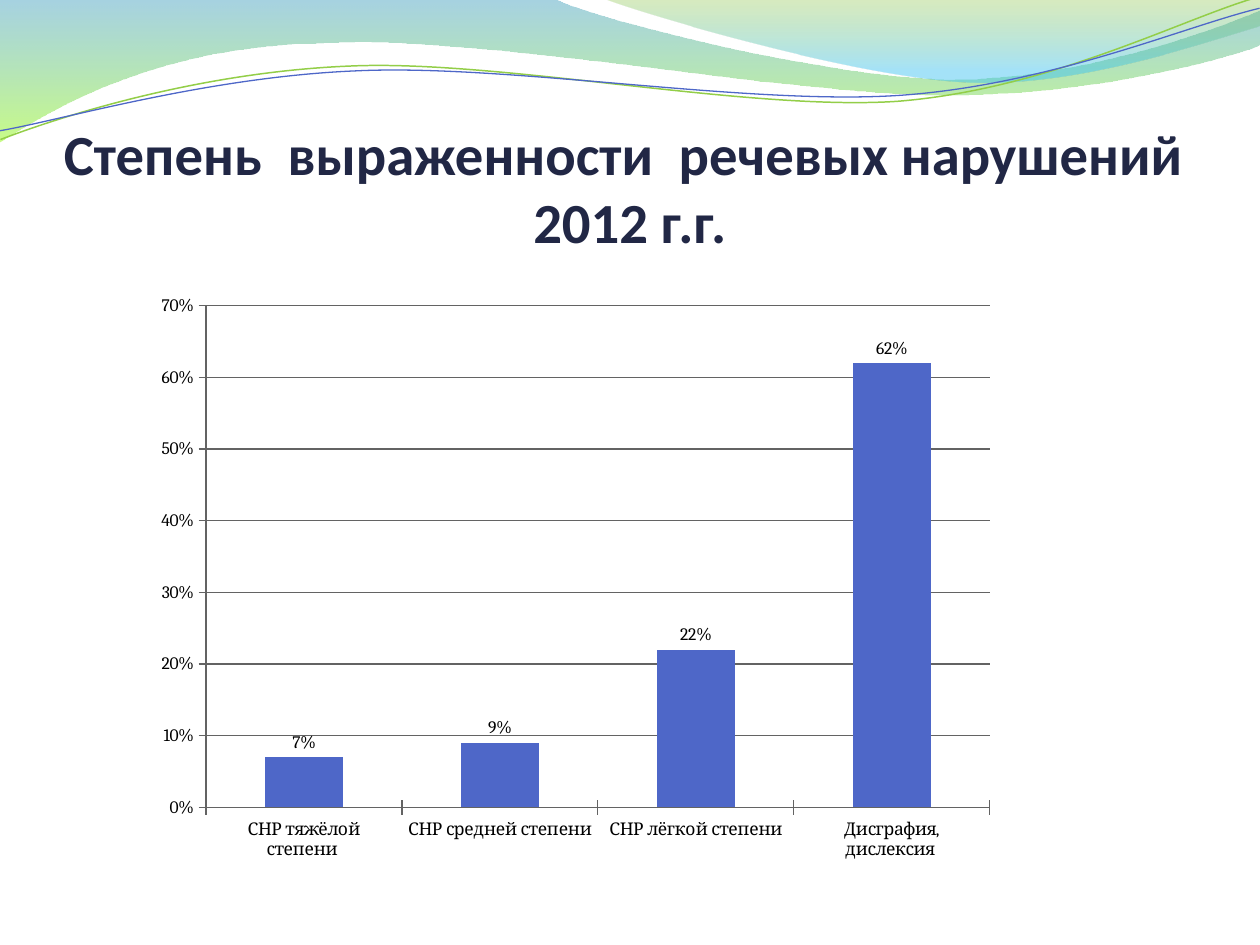
from lxml import etree
from pptx import Presentation
from pptx.chart.data import CategoryChartData
from pptx.dml.color import RGBColor
from pptx.enum.chart import XL_CHART_TYPE, XL_LABEL_POSITION, XL_TICK_MARK
from pptx.enum.text import MSO_ANCHOR, PP_ALIGN
from pptx.oxml.ns import qn
from pptx.util import Emu, Pt

EMU_PER_PX = 914400 / 126
LINE_TILT = 357.3
COLORS = {
    "title": "212745", "bar": "4E67C8", "axis": "636363", "text": "000000",
    "teal": "3B9CBF", "lime": "9CFA24", "olive": "7EBE2C", "sky": "39C1F1",
    "green_line": "93CE48", "blue_line": "4E67C8",
}

# Each wave is a start point, then line ends (1 point) or Bezier curves (3 points)
BACK_WAVE = [
    (0, 0), [(554, -1)],
    [(600, 21), (837, 79), (955, 79)], [(1075, 79), (1207, 33), (1260, 11)],
    [(1261, 45)],
    [(1239, 55), (1096, 96), (940, 95)], [(784, 94), (481, 35), (324, 43)],
    [(163, 45), (58, 105), (-1, 142)], [(0, 0)],
]
FRONT_WAVE = [
    (604, -1),
    [(641, 14), (859, 78), (969, 82)], [(1079, 87), (1211, 40), (1260, 26)],
    [(1260, 0)], [(604, -1)],
]
# The two line waves are given before their tilt
GREEN_CURVE = [
    (-2, 110), [(58, 90), (199, 52), (350, 53)],
    [(499, 53), (745, 117), (896, 114)], [(1049, 109), (1184, 45), (1260, 27)],
]
BLUE_CURVE = [
    (-2, 101), [(57, 94), (207, 57), (357, 58)],
    [(509, 58), (750, 112), (902, 108)], [(1052, 104), (1188, 52), (1262, 38)],
]
SEVERITY = {
    "СНР тяжёлой степени ": 0.07,
    "СНР средней степени": 0.09,
    "СНР лёгкой степени": 0.22,
    "Дисграфия, дислексия ": 0.62,
}


def px(length):
    return Emu(round(length * EMU_PER_PX))


def rgb(name):
    return RGBColor.from_string(COLORS[name])


def add_wave(slide, outline, closed):
    start, *segments = outline
    builder = slide.shapes.build_freeform(px(start[0]), px(start[1]))
    builder.add_line_segments(
        [(px(x), px(y)) for segment in segments for x, y in segment], close=closed)
    wave = builder.convert_to_shape()
    wave.shadow.inherit = False

    # Merge the three points of each curve into one Bezier segment
    steps = iter(list(wave._element.spPr.iter(qn("a:lnTo"))))
    for segment in segments:
        group = [next(steps) for _ in segment]
        if len(group) == 3:
            curve = etree.Element(qn("a:cubicBezTo"))
            group[0].addprevious(curve)
            for step in group:
                curve.append(step[0])
                step.getparent().remove(step)
    return wave


def add_filled_wave(slide, outline, stops):
    wave = add_wave(slide, outline, True)
    wave.line.fill.background()
    wave.fill.gradient()
    wave.fill.gradient_angle = 270
    for stop, (position, color, opacity) in zip(wave.fill.gradient_stops, stops):
        stop.position = position
        stop.color.rgb = rgb(color)
    # Opacity of each gradient stop
    for color_xml, stop in zip(wave._element.spPr.iter(qn("a:srgbClr")), stops):
        etree.SubElement(color_xml, qn("a:alpha"), val=str(stop[2] * 1000))


def add_wave_line(slide, outline, color, width):
    wave = add_wave(slide, outline, False)
    wave.rotation = LINE_TILT
    wave.fill.background()
    wave.line.color.rgb = rgb(color)
    wave.line.width = Pt(width)


def add_title(slide, text):
    frame = slide.shapes.add_textbox(px(63), px(97), px(1134), px(158)).text_frame
    frame.word_wrap = True
    frame.vertical_anchor = MSO_ANCHOR.BOTTOM
    frame.margin_left = frame.margin_right = frame.margin_bottom = 0
    paragraph = frame.paragraphs[0]
    paragraph.text = text
    paragraph.alignment = PP_ALIGN.CENTER
    paragraph.font.name = "Calibri"
    paragraph.font.size = Pt(32.4)
    paragraph.font.bold = True
    paragraph.font.color.rgb = rgb("title")


def style_line(line):
    line.color.rgb = rgb("axis")
    line.width = Pt(0.75)


def add_severity_chart(slide):
    data = CategoryChartData(number_format="0%")
    data.categories = list(SEVERITY)
    data.add_series("Series 1", list(SEVERITY.values()))
    chart = slide.shapes.add_chart(XL_CHART_TYPE.COLUMN_CLUSTERED, px(144), px(284),
                                   px(863), px(587), data).chart
    chart.has_legend = False
    chart.has_title = False
    chart.font.name = "Cambria"
    chart.font.size = Pt(10)
    chart.font.color.rgb = rgb("text")

    # Axes and gridlines
    for axis in (chart.category_axis, chart.value_axis):
        axis.major_tick_mark = XL_TICK_MARK.CROSS
        axis.minor_tick_mark = XL_TICK_MARK.NONE
        style_line(axis.format.line)
    percent = chart.value_axis
    percent.minimum_scale, percent.maximum_scale, percent.major_unit = 0, 0.7, 0.1
    percent.tick_labels.number_format = "0%"
    percent.tick_labels.number_format_is_linked = False
    percent.has_major_gridlines = True
    style_line(percent.major_gridlines.format.line)

    # Bars and their labels
    plot = chart.plots[0]
    plot.gap_width = 150
    plot.vary_by_categories = False
    bars = plot.series[0]
    bars.format.fill.solid()
    bars.format.fill.fore_color.rgb = rgb("bar")
    labels = bars.data_labels
    labels.show_value = True
    labels.number_format = "0%"
    labels.number_format_is_linked = False
    labels.position = XL_LABEL_POSITION.OUTSIDE_END


def main():
    deck = Presentation()
    deck.slide_width, deck.slide_height = px(1260), px(945)
    slide = deck.slides.add_slide(deck.slide_layouts[6])
    # Wave decoration
    add_filled_wave(slide, BACK_WAVE, [(0, "teal", 45), (1, "lime", 55)])
    add_filled_wave(slide, FRONT_WAVE, [(0, "olive", 30), (0.8, "sky", 45)])
    add_wave_line(slide, GREEN_CURVE, "green_line", 0.85)
    add_wave_line(slide, BLUE_CURVE, "blue_line", 0.75)
    # Content
    add_title(slide, "Степень  выраженности  речевых нарушений \v2012 г.г.")
    add_severity_chart(slide)
    deck.save("out.pptx")


if __name__ == "__main__":
    main()
